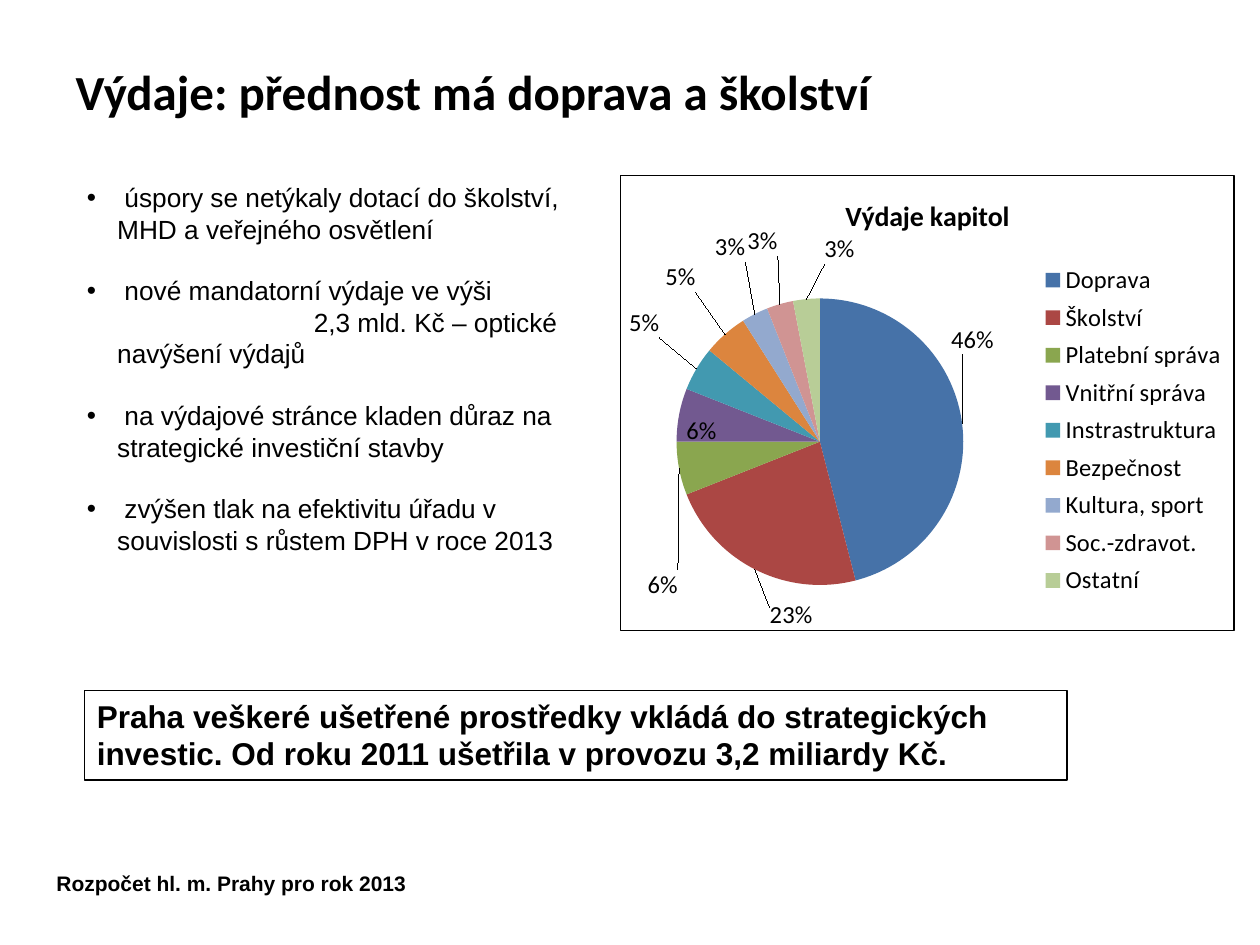
"""Build the slide on city spending, with a pie of budget chapters."""
from dataclasses import dataclass

from lxml import etree
from pptx import Presentation
from pptx.chart.data import CategoryChartData
from pptx.dml.color import RGBColor
from pptx.enum import chart as charts, shapes, text
from pptx.oxml import parse_xml
from pptx.oxml.ns import nsdecls, qn
from pptx.util import Inches, Pt


@dataclass(frozen=True)
class Theme:
    ink: str = "000000"
    body_font: str = "Arial"
    display_font: str = "Calibri"
    title: int = 28
    message: int = 18
    chart_title: int = 16
    bullet: int = 15
    chart: int = 14
    footer: int = 12
    hairline: float = 0.75


@dataclass(frozen=True)
class Chapter:
    name: str
    share: float
    color: str
    shift: tuple[float, float] | None


THEME = Theme()

CHAPTERS = [
    Chapter("Doprava", 0.46, "4672A8", (-0.03, -0.15)),
    Chapter("Školství", 0.23, "AB4744", (0.1, 0.07)),
    Chapter("Platební správa", 0.06, "8AA64F", (0.01, 0.22)),
    Chapter("Vnitřní správa", 0.06, "725990", None),
    Chapter("Instrastruktura", 0.05, "4299B0", (-0.05, -0.06)),
    Chapter("Bezpečnost", 0.05, "DC853E", (-0.04, -0.08)),
    Chapter("Kultura, sport", 0.03, "93A9CE", (-0.01, -0.1)),
    Chapter("Soc.-zdravot.", 0.03, "D09493", (0, -0.09)),
    Chapter("Ostatní", 0.03, "B8CD97", (0.08, -0.06)),
]

POINTS = [
    " úspory se netýkaly dotací do školství, MHD a veřejného osvětlení",
    " nové mandatorní výdaje ve výši\v\t2,3 mld. Kč – optické navýšení výdajů",
    " na výdajové stránce kladen důraz na strategické investiční stavby",
    " zvýšen tlak na efektivitu úřadu v souvislosti s růstem DPH v roce 2013",
]


def style_font(font, size: float, name: str = THEME.body_font, bold: bool = False) -> None:
    """Apply size, typeface, weight and ink colour to a font."""
    font.size, font.name, font.bold = Pt(size), name, bold
    font.color.rgb = RGBColor.from_string(THEME.ink)


def write(frame, *lines: str, size: float, name: str = THEME.body_font, bold: bool = False,
          anchor=text.MSO_ANCHOR.TOP, gap: float = 0, hanging: float = 0, tab: float = 0) -> None:
    """Fill a text frame with left-aligned formatted paragraphs."""
    frame.word_wrap = True
    frame.auto_size = text.MSO_AUTO_SIZE.NONE
    frame.vertical_anchor = anchor
    for number, line in enumerate(lines):
        paragraph = frame.add_paragraph() if number else frame.paragraphs[0]
        paragraph.text = line
        paragraph.alignment = text.PP_ALIGN.LEFT
        paragraph.space_before = Pt(gap if number else 0)
        properties = paragraph._p.get_or_add_pPr()
        if hanging:
            properties.set("marL", str(Inches(hanging)))
            properties.set("indent", str(-Inches(hanging)))
            bullet = etree.SubElement(properties, qn("a:buChar"))
            bullet.set("char", "•")
        if tab and "\t" in line:
            stops = etree.SubElement(properties, qn("a:tabLst"))
            etree.SubElement(stops, qn("a:tab"), pos=str(Inches(tab)), algn="l")
        style_font(paragraph.font, size, name, bold)
        for run in paragraph.runs:
            style_font(run.font, size, name, bold)


def move(shape, left: float, top: float, width: float, height: float) -> None:
    """Place a shape by lengths in inches."""
    shape.left, shape.top = Inches(left), Inches(top)
    shape.width, shape.height = Inches(width), Inches(height)


def set_layout(parent, index: int, **values) -> None:
    """Give a chart element a manual layout as its child at the index."""
    for old in parent.findall(qn("c:layout")):
        parent.remove(old)
    layout = etree.Element(qn("c:layout"))
    manual = etree.SubElement(layout, qn("c:manualLayout"))
    for key, value in values.items():
        etree.SubElement(manual, qn(f"c:{key}"), val=str(value))
    parent.insert(index, layout)


def add_spending_pie(slide) -> None:
    """Draw the pie of budget chapters with its legend and labels."""
    data = CategoryChartData(number_format="0%")
    data.categories = [chapter.name for chapter in CHAPTERS]
    data.add_series("Výdaje kapitol", [chapter.share for chapter in CHAPTERS])
    pie = slide.shapes.add_chart(charts.XL_CHART_TYPE.PIE, Inches(4.92), Inches(1.39),
                                 Inches(4.88), Inches(3.62), data).chart
    style_font(pie.font, THEME.chart, THEME.display_font)
    pie.has_title = True
    write_title = pie.chart_title.text_frame
    write_title.text = "Výdaje kapitol"
    style_font(write_title.paragraphs[0].runs[0].font, THEME.chart_title, THEME.display_font, True)
    pie._chartSpace.chart.addnext(parse_xml(
        f'<c:spPr {nsdecls("c", "a")}><a:noFill/><a:ln w="{Pt(THEME.hairline)}"><a:solidFill>'
        f'<a:srgbClr val="{THEME.ink}"/></a:solidFill></a:ln></c:spPr>'))

    edges = dict(xMode="edge", yMode="edge")
    set_layout(pie._chartSpace.chart.plotArea, 0, layoutTarget="inner", **edges,
               x=0.09, y=0.27, w=0.47, h=0.63)
    pie.has_legend = True
    pie.legend.position = charts.XL_LEGEND_POSITION.RIGHT
    pie.legend.include_in_layout = False
    style_font(pie.legend.font, THEME.chart, THEME.display_font)
    set_layout(pie.legend._element, 1, **edges, x=0.69, y=0.18, w=0.3, h=0.76)

    plot = pie.plots[0]
    plot.vary_by_categories = True
    spending = plot.series[0]
    labels = spending.data_labels
    labels.show_value = True
    labels.number_format, labels.number_format_is_linked = "0%", False
    for number, chapter in enumerate(CHAPTERS):
        point = spending.points[number]
        point.format.fill.solid()
        point.format.fill.fore_color.rgb = RGBColor.from_string(chapter.color)
        label = point.data_label
        if chapter.shift is None:
            label.position = charts.XL_LABEL_POSITION.INSIDE_END
        else:
            label.position = charts.XL_LABEL_POSITION.OUTSIDE_END
            across, down = chapter.shift
            set_layout(label._get_or_add_dLbl(), 1, x=across, y=down)


def add_message(slide) -> None:
    """Draw the outlined key message."""
    message = slide.shapes.add_shape(shapes.MSO_SHAPE.RECTANGLE, Inches(0.67), Inches(5.48),
                                     Inches(7.8), Inches(0.71))
    message.shadow.inherit = False
    message.fill.background()
    message.line.color.rgb = RGBColor.from_string(THEME.ink)
    message.line.width = Pt(THEME.hairline)
    write(message.text_frame,
          "Praha veškeré ušetřené prostředky vkládá do strategických investic. "
          "Od roku 2011 ušetřila v provozu 3,2 miliardy Kč.",
          size=THEME.message, bold=True)


def main() -> None:
    """Build and save the presentation."""
    deck = Presentation()
    deck.slide_width, deck.slide_height = Inches(10), Inches(7.5)
    slide = deck.slides.add_slide(deck.slide_layouts[1])
    heading, savings = slide.placeholders
    move(heading, 0.5, 0.3, 9.5, 0.85)
    write(heading.text_frame, "Výdaje: přednost má doprava a školství", size=THEME.title,
          name=THEME.display_font, bold=True, anchor=text.MSO_ANCHOR.MIDDLE)
    move(savings, 0.59, 1.39, 4.25, 3.13)
    write(savings.text_frame, *POINTS, size=THEME.bullet, gap=17.25, hanging=0.24, tab=1.8)
    add_spending_pie(slide)
    add_message(slide)
    footer = slide.shapes.add_textbox(Inches(0.35), Inches(6.86), Inches(7), Inches(0.64))
    write(footer.text_frame, "Rozpočet hl. m. Prahy pro rok 2013", size=THEME.footer, bold=True)
    deck.save("out.pptx")


if __name__ == "__main__":
    main()
